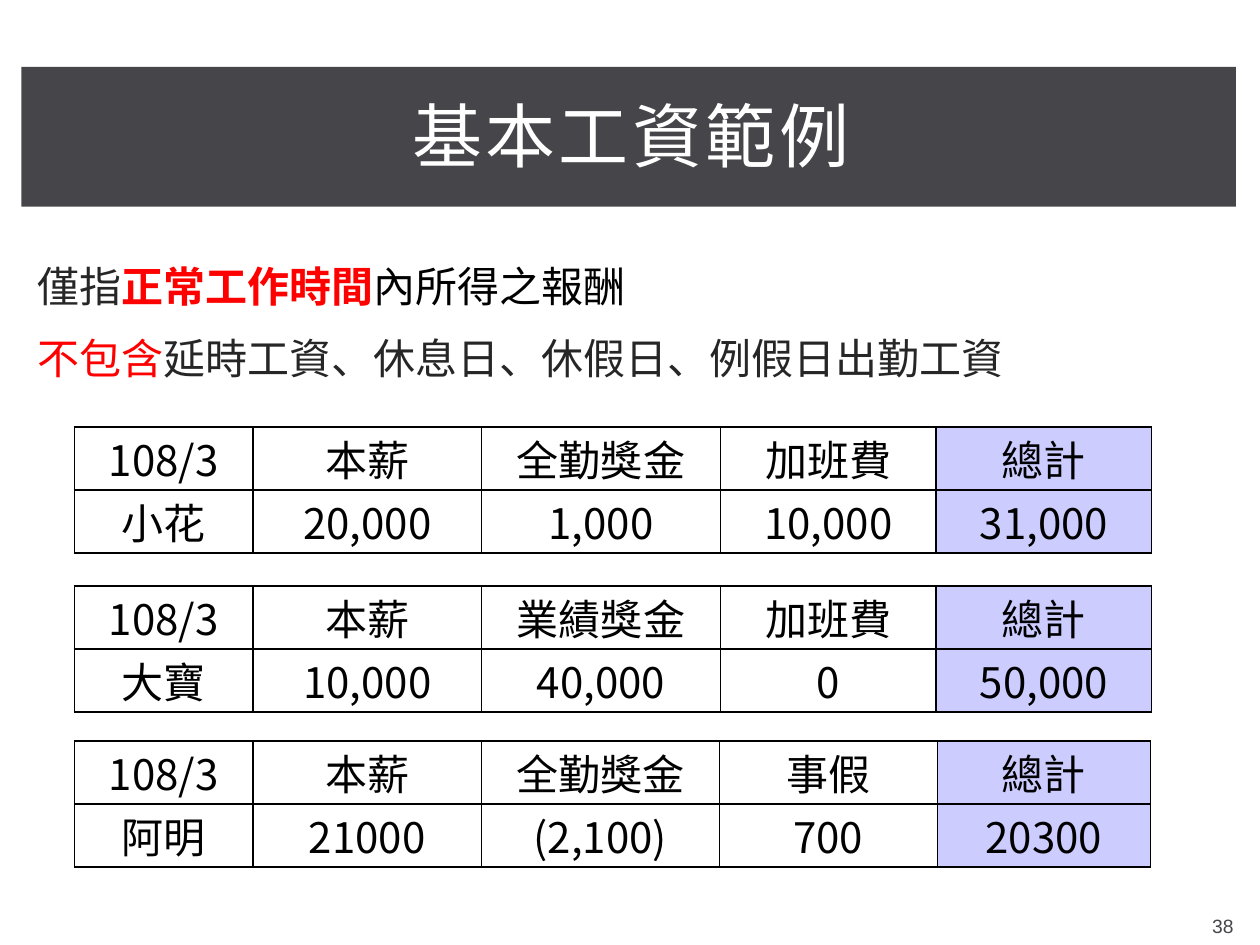
"""Build the basic wage example slide with three payroll tables."""
from dataclasses import dataclass

import pptx
import pptx.dml.color
import pptx.enum.shapes
import pptx.enum.text
import pptx.oxml
import pptx.oxml.ns
import pptx.util
from pptx.util import Inches

MIDDLE = pptx.enum.text.MSO_ANCHOR.MIDDLE
TOP = pptx.enum.text.MSO_ANCHOR.TOP
CENTER = pptx.enum.text.PP_ALIGN.CENTER
LEFT = pptx.enum.text.PP_ALIGN.LEFT
CELL_FONT = "Noto Sans CJK SC"
ROW_HEIGHT = 0.5


@dataclass
class Span:
    text: str
    color: str
    bold: bool = False


@dataclass
class TextBox:
    box: tuple[float, float, float, float]
    paragraphs: list[list[Span]]
    size: float
    align: int = CENTER
    anchor: int = MIDDLE
    gap: float = 0
    tracking: float = 0


@dataclass
class PayTable:
    top: float
    rows: list[list[str]]
    columns: tuple[float, ...] = (1.42, 1.81, 1.9, 1.71, 1.71)


TEXT_BOXES = [
    TextBox((0.42, 0.6, 9.17, 0.94), [[Span("基本工資範例", "FFFFFF")]], 40, tracking=2),
    TextBox(
        (0.2, 2.02, 9.61, 1.08),
        [
            [Span("僅指", "262626"), Span("正常工作時間", "FF0000", True), Span("內所得之報酬", "000000")],
            [Span("不包含", "FF0000"), Span("延時工資、休息日、休假日、例假日出勤工資", "262626")],
        ],
        24, LEFT, TOP, 6,
    ),
    TextBox((9.41, 7.2, 0.59, 0.3), [[Span("38", "46464A")]], 11),
]

PAY_TABLES = [
    PayTable(3.39, [["108/3", "本薪", "全勤獎金", "加班費", "總計"],
                    ["小花", "20,000", "1,000", "10,000", "31,000"]]),
    PayTable(4.65, [["108/3", "本薪", "業績獎金", "加班費", "總計"],
                    ["大寶", "10,000", "40,000", "0", "50,000"]]),
    PayTable(5.88, [["108/3", "本薪", "全勤獎金", "事假", "總計"],
                    ["阿明", "21000", "(2,100)", "700", "20300"]],
             (1.42, 1.81, 1.89, 1.73, 1.69)),
]


def color_of(value: str) -> pptx.dml.color.RGBColor:
    return pptx.dml.color.RGBColor.from_string(value)


def apply(target, values: dict) -> None:
    for name, value in values.items():
        setattr(target, name, value)


def add_span(paragraph, span: Span, size: float, font_name: str):
    run = paragraph.add_run()
    run.text = span.text
    apply(run.font, {"name": font_name, "size": pptx.util.Pt(size), "bold": span.bold})
    run.font.color.rgb = color_of(span.color)
    return run


def add_banner(slide) -> None:
    shape = slide.shapes.add_shape(
        pptx.enum.shapes.MSO_SHAPE.RECTANGLE,
        Inches(0.17), Inches(0.53), Inches(9.64), Inches(1.11),
    )
    shape.shadow.inherit = False
    shape.fill.solid()
    shape.fill.fore_color.rgb = color_of("46464A")
    shape.line.fill.background()


def add_text(slide, item: TextBox) -> None:
    frame = slide.shapes.add_textbox(*map(Inches, item.box)).text_frame
    apply(frame, {"word_wrap": True, "vertical_anchor": item.anchor})
    for index, spans in enumerate(item.paragraphs):
        paragraph = frame.add_paragraph() if index else frame.paragraphs[0]
        apply(paragraph, {
            "alignment": item.align,
            "space_before": pptx.util.Pt(item.gap if index else 0),
            "space_after": pptx.util.Pt(item.gap),
        })
        for span in spans:
            run = add_span(paragraph, span, item.size, "Arial")
            if item.tracking:
                run.font._element.set("spc", str(round(item.tracking * 100)))


def add_borders(cell) -> None:
    properties = cell._tc.get_or_add_tcPr()
    for index, side in enumerate(("lnL", "lnR", "lnT", "lnB")):
        border = pptx.oxml.parse_xml(
            f'<a:{side} {pptx.oxml.ns.nsdecls("a")} w="12700"><a:solidFill>'
            f'<a:srgbClr val="000000"/></a:solidFill></a:{side}>'
        )
        properties.insert(index, border)


def fill_cell(cell, text: str, is_total: bool) -> None:
    apply(cell, {
        "vertical_anchor": MIDDLE,
        "margin_left": 0, "margin_right": 0, "margin_top": 0, "margin_bottom": 0,
    })
    if is_total:
        cell.fill.solid()
        cell.fill.fore_color.rgb = color_of("CCCCFF")
    else:
        cell.fill.background()
    add_borders(cell)
    paragraph = cell.text_frame.paragraphs[0]
    paragraph.alignment = CENTER
    run = add_span(paragraph, Span(text, "000000"), 24, CELL_FONT)
    east_asian = pptx.oxml.parse_xml(
        f'<a:ea {pptx.oxml.ns.nsdecls("a")} typeface="{CELL_FONT}"/>'
    )
    run.font._element.append(east_asian)


def add_pay_table(slide, item: PayTable) -> None:
    table = slide.shapes.add_table(
        len(item.rows), len(item.columns), Inches(0.59), Inches(item.top),
        Inches(sum(item.columns)), Inches(ROW_HEIGHT * len(item.rows)),
    ).table
    apply(table, {"first_row": False, "horz_banding": False})
    for column, width in zip(table.columns, item.columns):
        column.width = Inches(width)
    for row_index, texts in enumerate(item.rows):
        table.rows[row_index].height = Inches(ROW_HEIGHT)
        for column_index, text in enumerate(texts):
            is_total = column_index == len(texts) - 1
            fill_cell(table.cell(row_index, column_index), text, is_total)


def main() -> None:
    presentation = pptx.Presentation()
    apply(presentation, {"slide_width": Inches(10), "slide_height": Inches(7.5)})
    slide = presentation.slides.add_slide(presentation.slide_layouts[6])
    add_banner(slide)
    for text_box in TEXT_BOXES:
        add_text(slide, text_box)
    for pay_table in PAY_TABLES:
        add_pay_table(slide, pay_table)
    presentation.save("out.pptx")


if __name__ == "__main__":
    main()
